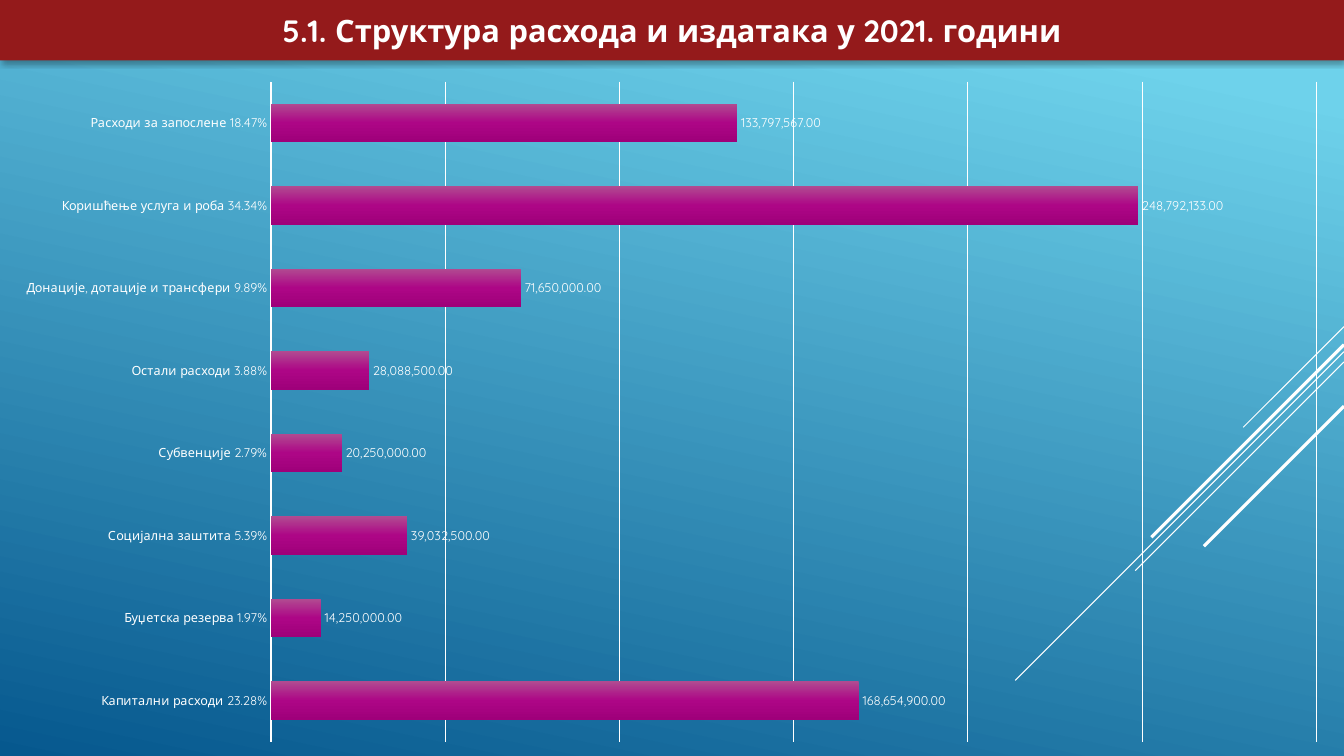
import copy

import pptx
import pptx.chart.data
import pptx.dml.color
import pptx.enum.chart
import pptx.enum.shapes
import pptx.enum.text
import pptx.oxml
import pptx.oxml.ns
import pptx.util

WIDTH, HEIGHT = pptx.util.Inches(13.33), pptx.util.Inches(7.5)
FONT = "Quicksand"
WHITE = "FFFFFF"
BANNER_SHARE = 0.08
CHART_TOP_SHARE = 0.09
AMOUNT_FORMAT = "#,##0.00"
A_NS = pptx.oxml.ns.nsdecls("a")

EXPENSES = [
    ("Капитални расходи 23.28%", 168654900),
    ("Буџетска резерва 1.97%", 14250000),
    ("Социјална заштита 5.39%", 39032500),
    ("Субвенције 2.79%", 20250000),
    ("Остали расходи 3.88%", 28088500),
    ("Донације, дотације и трансфери 9.89%", 71650000),
    ("Коришћење услуга и роба 34.34%", 248792133),
    ("Расходи за запослене 18.47%", 133797567),
]

# Start on the right edge and reach, in percent of slide height; width in points
RAYS = [
    (43.2, 13.33, 0.75),
    (46.53, 43.47, 0.75),
    (47.87, 27.6, 0.75),
    (45.6, 25.47, 2.25),
    (53.73, 18.53, 2.25),
]


def rgb(hex_color):
    return pptx.dml.color.RGBColor.from_string(hex_color)


def style_font(font, size, color=WHITE, bold=False):
    font.name = FONT
    font.size = pptx.util.Pt(size)
    font.bold = bold
    font.color.rgb = rgb(color)


def style_line(line, width, color=WHITE):
    line.color.rgb = rgb(color)
    line.width = pptx.util.Pt(width)


def write_text(frame, text, *, size, color=WHITE, bold=False,
               align=pptx.enum.text.PP_ALIGN.CENTER):
    frame.word_wrap = True
    frame.auto_size = pptx.enum.text.MSO_AUTO_SIZE.NONE
    frame.vertical_anchor = pptx.enum.text.MSO_ANCHOR.MIDDLE
    paragraph = frame.paragraphs[0]
    paragraph.alignment = align
    run = paragraph.add_run()
    run.text = text
    style_font(run.font, size, color, bold)


def paint_gradient(fill, owner, stops, clockwise_angle):
    """Fill with (position, colour) stops; owner is the XML element holding the fill."""
    fill.gradient()
    fill.gradient_angle = 360 - clockwise_angle
    stop_list = owner.xpath(".//a:gsLst")[0]
    while len(stop_list) < len(stops):
        stop_list.append(copy.deepcopy(stop_list[-1]))
    for stop, (position, color) in zip(fill.gradient_stops, stops):
        stop.position = position
        stop.color.rgb = rgb(color)


def add_ray(slide, start, reach, width):
    """Draw a 45-degree line running down and left from the right edge."""
    top = round(HEIGHT * start / 100)
    length = round(HEIGHT * reach / 100)
    ray = slide.shapes.add_connector(
        pptx.enum.shapes.MSO_CONNECTOR.STRAIGHT,
        WIDTH, top, WIDTH - length, top + length)
    style_line(ray.line, width)
    ray._element.spPr.append(pptx.oxml.parse_xml(f"<a:effectLst {A_NS}/>"))


def format_banner(banner, text):
    banner.left, banner.top = 0, 0
    banner.width, banner.height = WIDTH, round(HEIGHT * BANNER_SHARE)
    properties = banner._element.spPr
    properties.append(pptx.oxml.parse_xml(
        f'<a:prstGeom {A_NS} prst="roundRect"><a:avLst/></a:prstGeom>'))
    banner.fill.solid()
    banner.fill.fore_color.rgb = rgb("941A1B")
    banner.line.fill.background()
    properties.append(pptx.oxml.parse_xml(
        f'<a:effectLst {A_NS}><a:outerShdw blurRad="44450" dist="27940" dir="5400000"'
        ' algn="ctr" rotWithShape="0"><a:srgbClr val="000000"><a:alpha val="32000"/>'
        "</a:srgbClr></a:outerShdw></a:effectLst>"))
    write_text(banner.text_frame, text, size=22, bold=True)


def place_plot_area(chart, x, y, w, h):
    """Fix the inner plot area, in shares of the chart's size."""
    plot_area = chart._chartSpace.chart.plotArea
    for layout in plot_area.xpath("./c:layout"):
        plot_area.remove(layout)
    shares = "".join(f'<c:{tag} val="{share}"/>'
                     for tag, share in zip("xywh", (x, y, w, h)))
    plot_area.insert(0, pptx.oxml.parse_xml(
        f'<c:layout {pptx.oxml.ns.nsdecls("c")}><c:manualLayout>'
        '<c:layoutTarget val="inner"/><c:xMode val="edge"/><c:yMode val="edge"/>'
        f"{shares}</c:manualLayout></c:layout>"))


def add_expense_chart(slide):
    data = pptx.chart.data.CategoryChartData(number_format=AMOUNT_FORMAT)
    data.categories = [name for name, _ in EXPENSES]
    data.add_series("Series 1", [amount for _, amount in EXPENSES])
    top = round(HEIGHT * CHART_TOP_SHARE)
    chart = slide.shapes.add_chart(
        pptx.enum.chart.XL_CHART_TYPE.BAR_CLUSTERED,
        0, top, WIDTH, HEIGHT - top, data).chart
    chart.has_legend = False
    chart.has_title = False
    style_font(chart.font, 10)
    place_plot_area(chart, 0.2016, 0.0196, 0.778, 0.96)

    categories = chart.category_axis
    categories.major_tick_mark = pptx.enum.chart.XL_TICK_MARK.NONE
    categories.has_major_gridlines = False
    style_font(categories.tick_labels.font, 9)
    style_line(categories.format.line, 1)

    amounts = chart.value_axis
    amounts.visible = False
    amounts.minimum_scale, amounts.maximum_scale = 0, 300_000_000
    amounts.major_unit = 50_000_000
    amounts.has_major_gridlines = True
    style_line(amounts.major_gridlines.format.line, 0.75)
    amounts.tick_labels.number_format = AMOUNT_FORMAT
    amounts.tick_labels.number_format_is_linked = False

    plot = chart.plots[0]
    plot.gap_width, plot.overlap = 115, -20
    plot.vary_by_categories = False
    bars = plot.series[0]
    paint_gradient(bars.format.fill, bars._element,
                   [(0, "B14B91"), (0.5, "AD0686"), (1, "9F007A")], 90)
    labels = bars.data_labels
    labels.show_value = True
    labels.position = pptx.enum.chart.XL_LABEL_POSITION.OUTSIDE_END
    labels.number_format = AMOUNT_FORMAT
    labels.number_format_is_linked = False
    style_font(labels.font, 9)


def main():
    presentation = pptx.Presentation()
    presentation.slide_width, presentation.slide_height = WIDTH, HEIGHT
    slide = presentation.slides.add_slide(
        presentation.slide_layouts.get_by_name("Title Only"))
    paint_gradient(slide.background.fill, slide._element,
                   [(0.1, "6ED2EB"), (1, "06588E")], 102)
    for ray in RAYS:
        add_ray(slide, *ray)
    format_banner(slide.shapes.title, "5.1. Структура расхода и издатака у 2021. години")
    add_expense_chart(slide)
    presentation.save("out.pptx")


if __name__ == "__main__":
    main()
